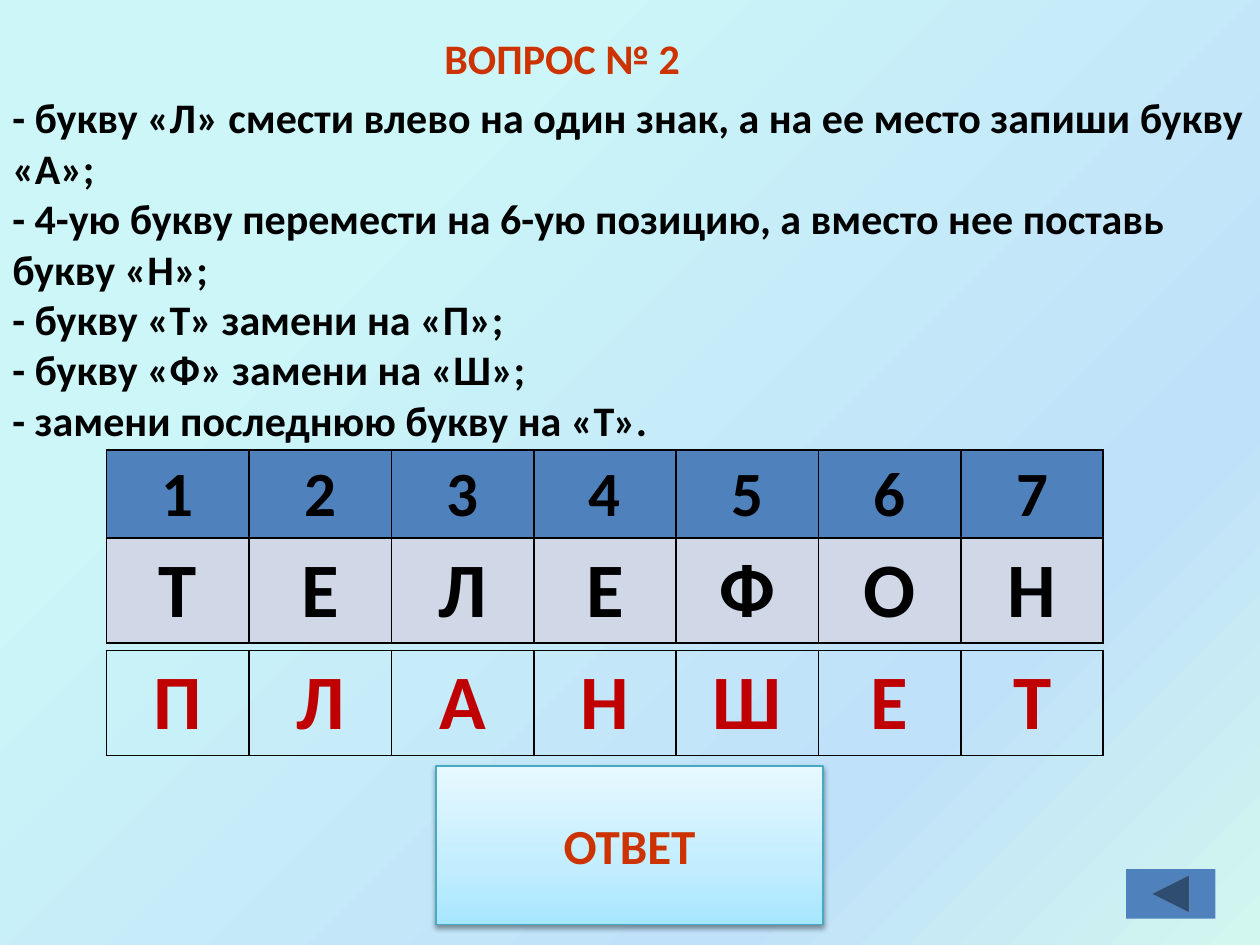
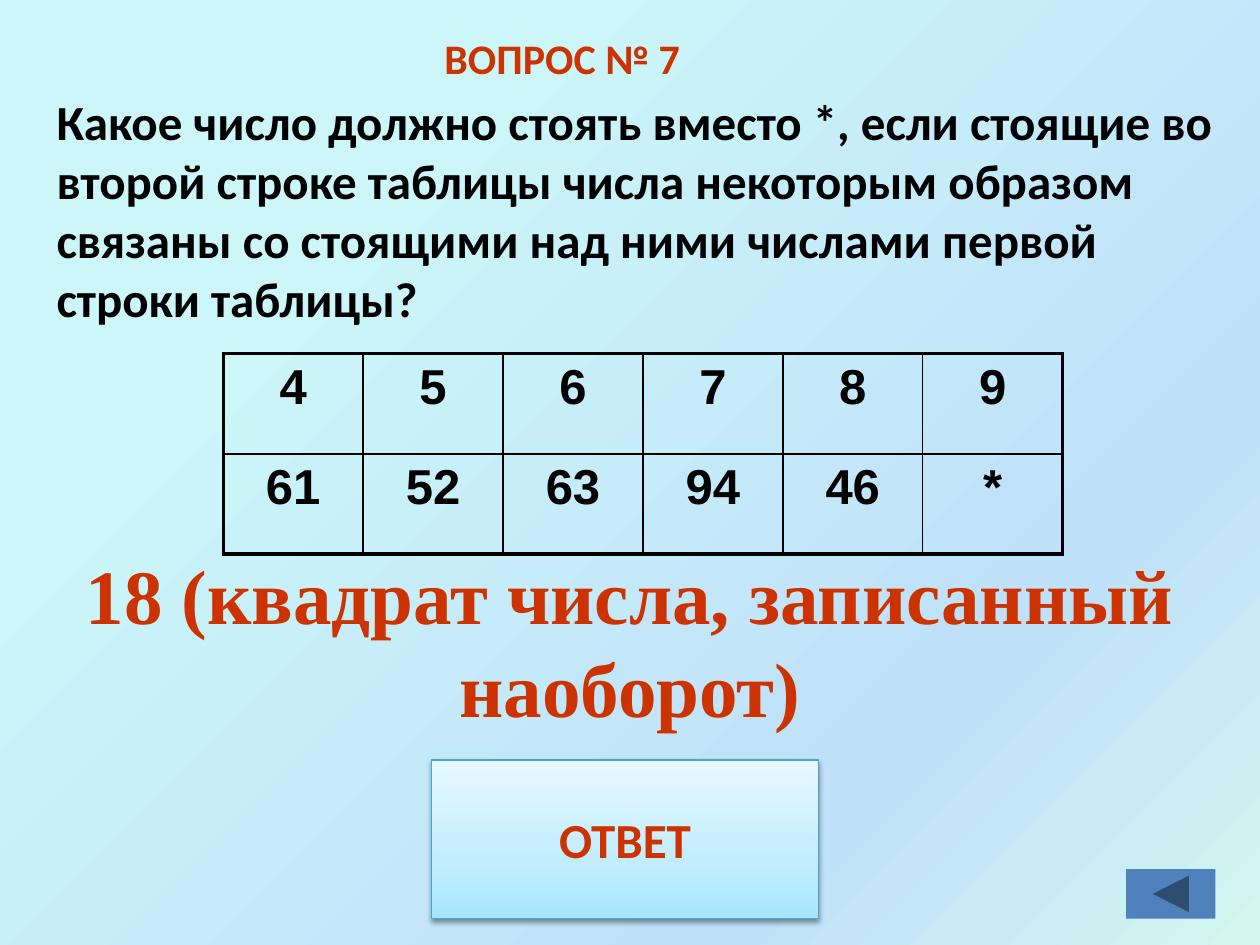
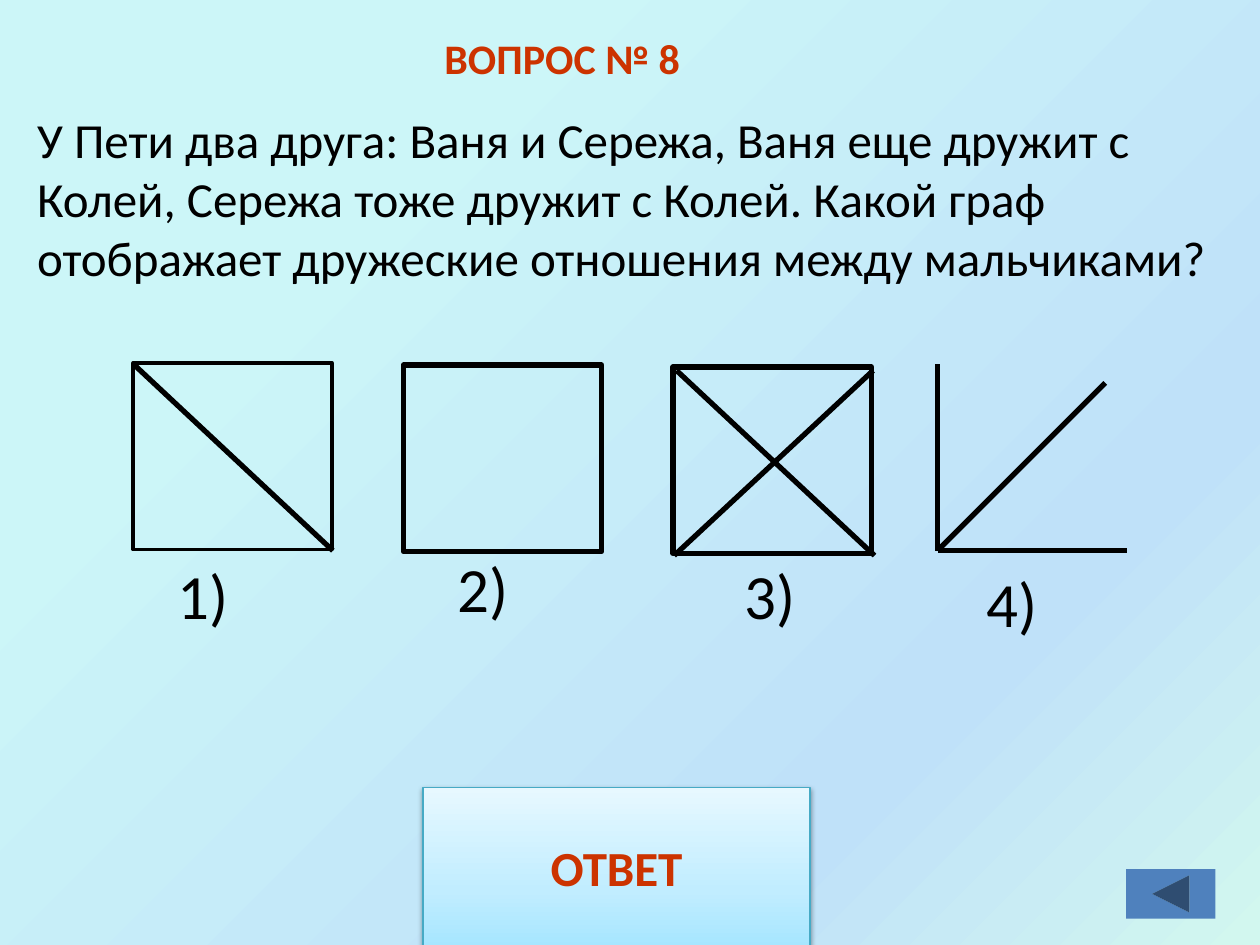
"""Build three quiz slides with questions, tables, graphs and answer buttons."""
from dataclasses import dataclass

from lxml.etree import SubElement
from pptx import Presentation
from pptx.dml.color import RGBColor
from pptx.enum.shapes import MSO_CONNECTOR as Connector, MSO_SHAPE as Shape
from pptx.enum.text import MSO_ANCHOR as Anchor, PP_ALIGN as Align
from pptx.oxml.ns import qn
from pptx.util import Cm, Pt


@dataclass(frozen=True)
class Theme:
    accent: str = "CC3300"
    solution: str = "C00000"
    ink: str = "000000"
    blue: str = "4F81BD"
    pale_blue: str = "D0D8E8"
    button_line: str = "46AAC5"
    background: tuple = ((0, "CCF6F8"), (25, "CCF6F8"), (75, "BFE1F9"), (100, "D2F7EF"))
    button: tuple = ((0, "A7E6FF"), (35, "C1EDFF"), (100, "E7F8FF"))
    body_font: str = "Calibri"
    table_font: str = "Arial"
    answer_font: str = "Times New Roman"
    title_size: int = 24
    text_size: int = 28
    number_size: int = 36
    letter_size: int = 44
    thin: float = 1
    medium: float = 2.25
    thick: float = 3


THEME = Theme()

LETTER_RULES = [
    "- букву «Л» смести влево на один знак, а на ее место запиши букву «А»;",
    "- 4-ую букву перемести на 6-ую позицию, а вместо нее поставь букву «Н»;",
    "- букву «Т» замени на «П»;",
    "- букву «Ф» замени на «Ш»;",
    "- замени последнюю букву на «Т».",
]
LETTER_ROWS = ["1234567", "ТЕЛЕФОН"]
SOLUTION_ROWS = ["ПЛАНШЕТ"]

NUMBER_QUESTION = (
    "Какое число должно стоять вместо *, если стоящие во второй строке таблицы "
    "числа некоторым образом связаны со стоящими над ними числами первой строки таблицы?"
)
NUMBER_ROWS = [["4", "5", "6", "7", "8", "9"], ["61", "52", "63", "94", "46", "*"]]
NUMBER_ANSWER = "18 (квадрат числа, записанный наоборот)"

GRAPH_QUESTION = (
    "У Пети два друга: Ваня и Сережа, Ваня еще дружит с Колей, Сережа тоже дружит "
    "с Колей. Какой граф отображает дружеские отношения между мальчиками?"
)
GRAPH_LABELS = [("1)", 3.33, 11.1), ("2)", 8.97, 10.95), ("3)", 14.76, 11.1), ("4)", 19.63, 11.25)]
SQUARE_LINES = [THEME.medium, THEME.thick, THEME.thick]
GRAPH_EDGES = [
    (2.69, 7.34, 6.71, 11.1),
    (13.64, 7.47, 17.63, 11.2),
    (17.6, 7.47, 13.59, 11.2),
    (18.9, 7.34, 18.9, 11.1),
    (18.9, 11.1, 22.71, 11.1),
    (18.9, 11.1, 22.28, 7.72),
]


def rgb(color):
    return RGBColor.from_string(color)


def set_gradient(owner, element, stops, angle):
    owner.fill.gradient()
    owner.fill.gradient_angle = angle
    stop_list = next(element.iter(qn("a:gsLst")))
    for stop in list(stop_list):
        stop_list.remove(stop)
    for position, color in stops:
        stop = SubElement(stop_list, qn("a:gs"), pos=str(position * 1000))
        SubElement(stop, qn("a:srgbClr"), val=color)


def style_paragraph(paragraph, size, color=THEME.ink, bold=True, font=THEME.body_font, align=Align.LEFT):
    paragraph.alignment = align
    paragraph.font.name = font
    paragraph.font.size = Pt(size)
    paragraph.font.bold = bold
    paragraph.font.color.rgb = rgb(color)


def add_text(slide, box, lines, size, wrap=True, **style):
    frame = slide.shapes.add_textbox(*map(Cm, box)).text_frame
    frame.word_wrap = wrap
    frame.text = "\n".join(lines)
    for paragraph in frame.paragraphs:
        style_paragraph(paragraph, size, **style)


def add_shape(slide, kind, box):
    shape = slide.shapes.add_shape(kind, *map(Cm, box))
    shape.shadow.inherit = False
    return shape


def add_answer_button(slide, left, top):
    button = add_shape(slide, Shape.ACTION_BUTTON_CUSTOM, (left, top, 7.8, 3.2))
    set_gradient(button, button._element, THEME.button, 90)
    button.line.color.rgb = rgb(THEME.button_line)
    button.line.width = Pt(0.75)
    effects = button._element.spPr.find(qn("a:effectLst"))
    shadow = SubElement(effects, qn("a:outerShdw"), blurRad="40000", dist="20000", dir="5400000", rotWithShape="0")
    color = SubElement(shadow, qn("a:srgbClr"), val=THEME.ink)
    SubElement(color, qn("a:alpha"), val="38000")
    frame = button.text_frame
    frame.word_wrap = False
    frame.vertical_anchor = Anchor.MIDDLE
    frame.text = "ОТВЕТ"
    style_paragraph(frame.paragraphs[0], THEME.text_size, THEME.accent, align=Align.CENTER)


def add_question_slide(presentation, number, button_left, button_top):
    slide = presentation.slides.add_slide(presentation.slide_layouts[6])
    add_text(slide, (8.71, 0.53, 6.8, 1.27), [f"ВОПРОС № {number}"], THEME.title_size, color=THEME.accent)
    add_answer_button(slide, button_left, button_top)
    back = add_shape(slide, Shape.ACTION_BUTTON_BACK_OR_PREVIOUS, (22.7, 17.52, 1.8, 1))
    back.fill.solid()
    back.fill.fore_color.rgb = rgb(THEME.blue)
    back.line.fill.background()
    return slide


def set_borders(cell, widths):
    properties = cell._tc.get_or_add_tcPr()
    for index, (side, width) in enumerate(zip("LRTB", widths)):
        border = SubElement(properties, qn(f"a:ln{side}"), w=str(Pt(width)))
        fill = SubElement(border, qn("a:solidFill"))
        SubElement(fill, qn("a:srgbClr"), val=THEME.ink)
        properties.insert(index, border)


def add_grid(slide, left, top, column_width, row_heights, rows, sizes, fills, outline=THEME.thin, **style):
    last_row, last_column = len(rows) - 1, len(rows[0]) - 1
    width = column_width * len(rows[0])
    box = map(Cm, (left, top, width, sum(row_heights)))
    table = slide.shapes.add_table(len(rows), len(rows[0]), *box).table
    table.first_row = table.horz_banding = False
    for column in table.columns:
        column.width = Cm(column_width)
    for r, values in enumerate(rows):
        table.rows[r].height = Cm(row_heights[r])
        for c, value in enumerate(values):
            cell = table.cell(r, c)
            cell.text = value
            style_paragraph(cell.text_frame.paragraphs[0], sizes[r], align=Align.CENTER, **style)
            if fills[r]:
                cell.fill.solid()
                cell.fill.fore_color.rgb = rgb(fills[r])
            else:
                cell.fill.background()
            on_edge = (c == 0, c == last_column, r == 0, r == last_row)
            set_borders(cell, [outline if edge else THEME.thin for edge in on_edge])


def add_edge(slide, ends):
    edge = slide.shapes.add_connector(Connector.STRAIGHT, *map(Cm, ends))
    edge.line.color.rgb = rgb(THEME.ink)
    edge.line.width = Pt(THEME.thick)
    SubElement(edge._element.spPr, qn("a:effectLst"))


def build_letters(presentation):
    slide = add_question_slide(presentation, 2, 8.79, 15.44)
    add_text(slide, (0, 1.73, 25.4, 7.44), LETTER_RULES, THEME.title_size)
    add_grid(slide, 2.15, 9.07, 2.87, [1.77, 2.11], LETTER_ROWS,
             [THEME.number_size, THEME.letter_size], [THEME.blue, THEME.pale_blue])
    add_grid(slide, 2.15, 13.11, 2.87, [2.11], SOLUTION_ROWS,
             [THEME.letter_size], [None], color=THEME.solution)


def build_numbers(presentation):
    slide = add_question_slide(presentation, 7, 8.7, 15.32)
    add_text(slide, (0, 10.92, 25.4, 4), [NUMBER_ANSWER], THEME.letter_size,
             color=THEME.accent, font=THEME.answer_font, align=Align.CENTER)
    add_grid(slide, 4.5, 7.13, 2.82, [2.02, 2.02], NUMBER_ROWS, [THEME.text_size] * 2,
             [None] * 2, outline=THEME.medium, font=THEME.table_font)
    add_text(slide, (0.89, 1.73, 23.8, 5), [NUMBER_QUESTION], THEME.text_size)


def build_graphs(presentation):
    slide = add_question_slide(presentation, 8, 8.53, 15.87)
    add_text(slide, (0.5, 2.08, 24.9, 5.05), [GRAPH_QUESTION], THEME.text_size, bold=False)
    for label, left, top in GRAPH_LABELS:
        add_text(slide, (left, top, 1.65, 1.8), [label], THEME.number_size, wrap=False, bold=False)
    for index, width in enumerate(SQUARE_LINES):
        square = add_shape(slide, Shape.RECTANGLE, (2.69 + 5.44 * index, 7.32 + 0.04 * index, 4, 3.76))
        square.fill.background()
        square.line.color.rgb = rgb(THEME.ink)
        square.line.width = Pt(width)
    for ends in GRAPH_EDGES:
        add_edge(slide, ends)


def main():
    presentation = Presentation()
    presentation.slide_width, presentation.slide_height = Cm(25.4), Cm(19.05)
    master = presentation.slide_master
    set_gradient(master.background, master.element, THEME.background, 315)
    build_letters(presentation)
    build_numbers(presentation)
    build_graphs(presentation)
    presentation.save("out.pptx")


if __name__ == "__main__":
    main()
